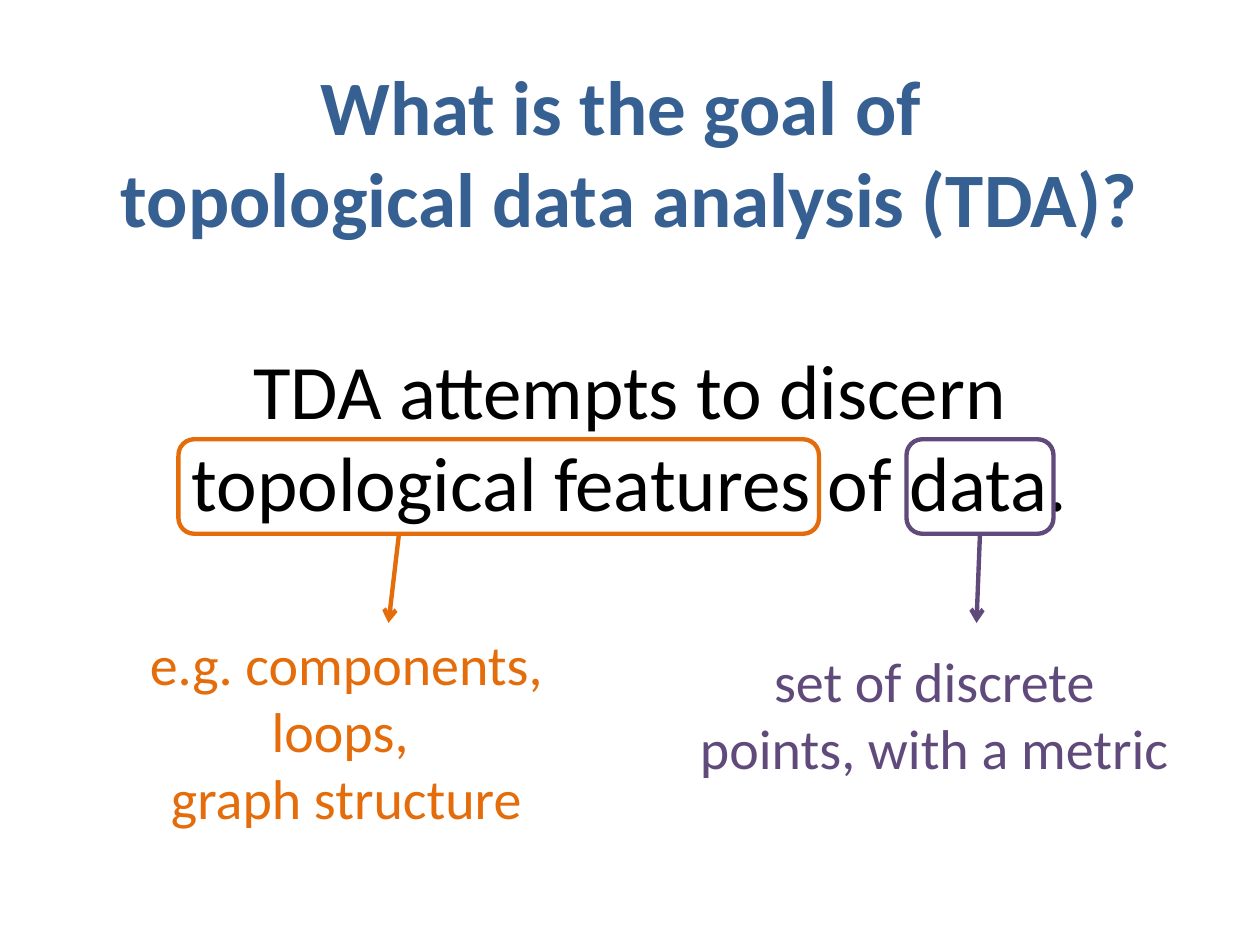
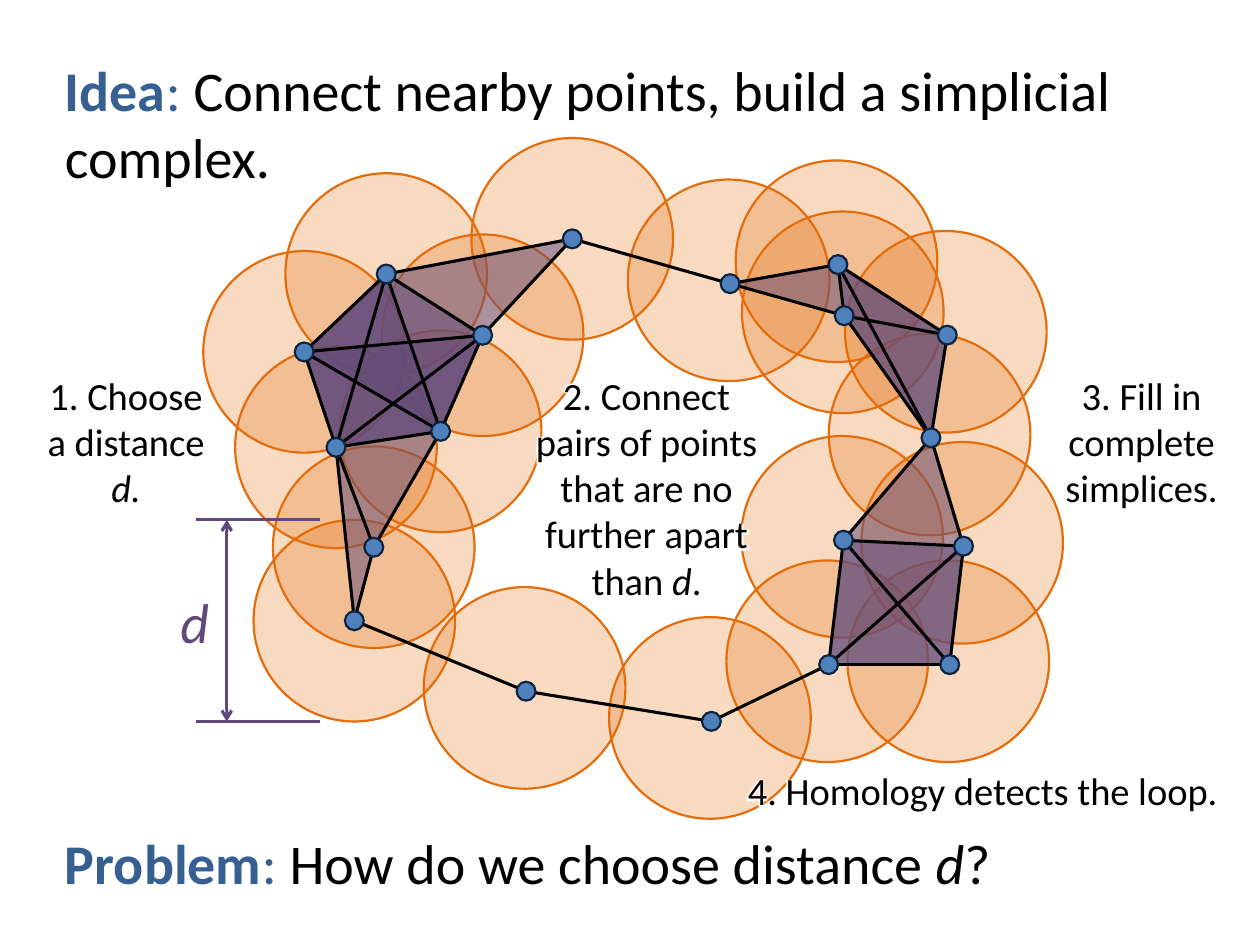
"""Build two slides on the goal and the idea of topological data analysis."""
from dataclasses import dataclass
from itertools import combinations
from math import dist

from lxml.etree import SubElement
from pptx import Presentation
from pptx.dml.color import RGBColor
from pptx.enum.shapes import MSO_CONNECTOR as Link, MSO_SHAPE as Preset
from pptx.enum.text import MSO_AUTO_SIZE as AutoSize, PP_ALIGN as Align
from pptx.oxml.ns import qn
from pptx.util import Pt


@dataclass(frozen=True)
class Theme:
    font: str = "Calibri"
    title: int = 44
    body: int = 32
    note: int = 22
    ink: str = "000000"
    halo: str = "FFFFFF"
    blue: str = "376092"
    orange: str = "E46C0A"
    purple: str = "604A7B"
    dot_fill: str = "4F81BD"
    dot_rim: str = "0F243E"
    thick: float = 2.5
    medium: float = 1.75
    thin: float = 1.25
    disc_alpha: int = 25
    face_alpha: int = 50


THEME = Theme()
BOLD, ITALIC = {"bold": True}, {"italic": True}
CENTER, LEFT = Align.CENTER, Align.LEFT

GOAL_TEXTS = [
    ((36, 30, 648, 114), THEME.title, THEME.blue,
     [[("What is the goal of ", BOLD)], [("topological data analysis (TDA)?", BOLD)]]),
    ((66, 356, 264, 124), THEME.body, THEME.orange,
     [[("e.g. components, loops, ", {})], [("graph structure", {})]]),
    ((390, 366, 288, 85), THEME.body, THEME.purple,
     [[("set of discrete points, with a metric", {})]]),
    ((36, 192, 648, 114), THEME.title, THEME.ink,
     [[("TDA attempts to discern topological features of data.", {})]]),
]
FRAME_TOP, FRAME_HEIGHT, ARROW_END = 251, 54, 356
FEATURES = {"left": 102, "width": 366, "color": THEME.orange}
DATA = {"left": 518, "width": 84, "color": THEME.purple}
FEATURES_ARROW, DATA_ARROW_X = (228, 222), 558

DISTANCE, DOT = 115.2, 10.8
POINTS = {
    "A": (173.8, 201.1), "B": (220.7, 156.6), "C": (275.8, 191.6), "D": (251.8, 246.5),
    "E": (192, 255.6), "F": (213.6, 312.7), "G": (202.5, 354.7), "H": (300.6, 395),
    "I": (406.5, 412.2), "J": (473.5, 379.8), "K": (542.7, 379.8), "L": (550.6, 312.1),
    "M": (482, 308.7), "N": (532, 250.2), "O": (541.3, 191.5), "P": (482.4, 180.4),
    "Q": (478.8, 151.2), "R": (417.2, 162.1), "S": (327, 136.5),
}
DISC_ORDER = "ONPQRSIGDEJAHFBCMLK"
SHIFTED_DISCS, DISC_SHIFT = "HIJKLMNOPQR", (-0.8, -1.9)
FACES = ("NPQO CBS DEAC KJML DABC DEAB GEF DABC KJML "
         "DEA NPO FED LMN OPQ PRQ").split()
MEASURED, MEASURE_X, TICK = "G", 129.6, (112.3, 182.9)

HEADINGS = [
    ((30, 28, 660, 85), "Idea",
     [("Connect nearby points, build a simplicial complex.", {})]),
    ((30, 470, 660, 46), "Problem",
     [("How do we choose distance ", {}), ("d", ITALIC), ("?", {})]),
]
NOTES = [
    ((18.7, 209, 106.6, 87), [("1. Choose a distance ", {}), ("d.", ITALIC)]),
    ((299, 209, 141, 140),
     [("2. Connect pairs of points that are no further apart than ", {}),
      ("d", ITALIC), (".", {})]),
    ((584.6, 209, 135.4, 87), [("3. Fill in complete simplices.", {})]),
    ((417.6, 435, 288, 34), [("4. Homology detects the loop.", {})]),
]


def lengths(values):
    return [Pt(value) for value in values]


def set_all(target, values):
    for key, value in values.items():
        setattr(target, key, value)


def style_line(shape, color, width):
    shape.line.color.rgb = RGBColor.from_string(color)
    shape.line.width = Pt(width)


def style_fill(shape, color, alpha=None):
    shape.fill.solid()
    shape.fill.fore_color.rgb = RGBColor.from_string(color)
    if alpha:
        tint = shape.element.spPr.find(qn("a:solidFill"))[0]
        SubElement(tint, qn("a:alpha"), val=str(alpha * 1000))


def add_halo(run):
    effects = run.font.fill and SubElement(run.font._element, qn("a:effectLst"))
    glow = SubElement(effects, qn("a:glow"), rad=str(Pt(5)))
    SubElement(glow, qn("a:srgbClr"), val=THEME.halo)
    run.font._element.find(qn("a:solidFill")).addnext(effects)


def add_text(slide, box, size, color, paragraphs, align=CENTER, wrap=True, halo=False):
    frame = slide.shapes.add_textbox(*lengths(box)).text_frame
    set_all(frame, {"word_wrap": wrap, "auto_size": AutoSize.SHAPE_TO_FIT_TEXT})
    for index, pieces in enumerate(paragraphs):
        paragraph = frame.add_paragraph() if index else frame.paragraphs[0]
        paragraph.alignment = align
        for words, look in pieces:
            look = dict(look)
            run = paragraph.add_run()
            run.text = words
            run.font.color.rgb = RGBColor.from_string(look.pop("color", color))
            set_all(run.font, {"name": THEME.font, "size": Pt(size), **look})
            if halo:
                add_halo(run)


def add_line(slide, start, end, color, width, arrows=()):
    line = slide.shapes.add_connector(Link.STRAIGHT, *lengths((*start, *end)))
    style_line(line, color, width)
    for tip in arrows:
        SubElement(line.element.spPr.find(qn("a:ln")), qn(f"a:{tip}"), type="arrow")
    SubElement(line.element.spPr, qn("a:effectLst"))
    return line


def add_circle(slide, center, diameter, fill, rim, alpha=None):
    left, top = (middle - diameter / 2 for middle in center)
    circle = slide.shapes.add_shape(Preset.OVAL, *lengths((left, top, diameter, diameter)))
    circle.shadow.inherit = False
    style_fill(circle, fill, alpha)
    style_line(circle, rim, THEME.thin)


def add_face(slide, corners):
    first, *rest = [lengths(POINTS[corner]) for corner in corners]
    builder = slide.shapes.build_freeform(*first)
    builder.add_line_segments(rest, close=True)
    face = builder.convert_to_shape()
    face.shadow.inherit = False
    style_fill(face, THEME.purple, THEME.face_alpha)
    face.line.fill.background()


def add_frame(slide, term):
    frame = slide.shapes.add_shape(Preset.ROUNDED_RECTANGLE, *lengths(
        (term["left"], FRAME_TOP, term["width"], FRAME_HEIGHT)))
    frame.shadow.inherit = False
    frame.fill.background()
    style_line(frame, term["color"], THEME.thick)
    return frame


def build_goal(slide):
    for box, size, color, paragraphs in GOAL_TEXTS:
        add_text(slide, box, size, color, paragraphs)
    bottom = FRAME_TOP + FRAME_HEIGHT
    add_frame(slide, FEATURES)
    start_x, end_x = FEATURES_ARROW
    add_line(slide, (start_x, bottom), (end_x, ARROW_END),
             FEATURES["color"], THEME.thick, ["tailEnd"])
    data_frame = add_frame(slide, DATA)
    middle = DATA["left"] + DATA["width"] / 2
    data_arrow = add_line(slide, (middle, bottom), (DATA_ARROW_X, ARROW_END),
                          DATA["color"], THEME.thick, ["tailEnd"])
    data_arrow.begin_connect(data_frame, 2)


def build_complex(slide):
    for name in DISC_ORDER:
        shift = DISC_SHIFT if name in SHIFTED_DISCS else (0, 0)
        center = [place + move for place, move in zip(POINTS[name], shift)]
        add_circle(slide, center, DISTANCE, THEME.orange, THEME.orange, THEME.disc_alpha)
    for corners in FACES:
        add_face(slide, corners)
    for start, end in combinations(POINTS.values(), 2):
        if dist(start, end) <= DISTANCE:
            add_line(slide, start, end, THEME.ink, THEME.medium)
    for center in POINTS.values():
        add_circle(slide, center, DOT, THEME.dot_fill, THEME.dot_rim)


def build_measure(slide):
    middle = POINTS[MEASURED][1]
    top, bottom = middle - DISTANCE / 2, middle + DISTANCE / 2
    for level in (bottom, top):
        add_line(slide, (TICK[0], level), (TICK[1], level), THEME.purple, THEME.medium)
    add_line(slide, (MEASURE_X, bottom), (MEASURE_X, top),
             THEME.purple, THEME.medium, ["headEnd", "tailEnd"])
    add_text(slide, (96, 332, 31, 46), THEME.body, THEME.purple,
             [[("d", ITALIC)]], LEFT, wrap=False)


def build_idea(slide):
    build_complex(slide)
    build_measure(slide)
    for box, label, words in HEADINGS:
        lead = [(label, {"color": THEME.blue, **BOLD}), (": ", {"color": THEME.blue})]
        add_text(slide, box, THEME.body, THEME.ink, [lead + words], LEFT)
    for box, words in NOTES:
        add_text(slide, box, THEME.note, THEME.ink, [words], halo=True)


def main():
    deck = Presentation()
    set_all(deck, {"slide_width": Pt(720), "slide_height": Pt(540)})
    for build in (build_goal, build_idea):
        build(deck.slides.add_slide(deck.slide_layouts[6]))
    deck.save("out.pptx")


if __name__ == "__main__":
    main()
